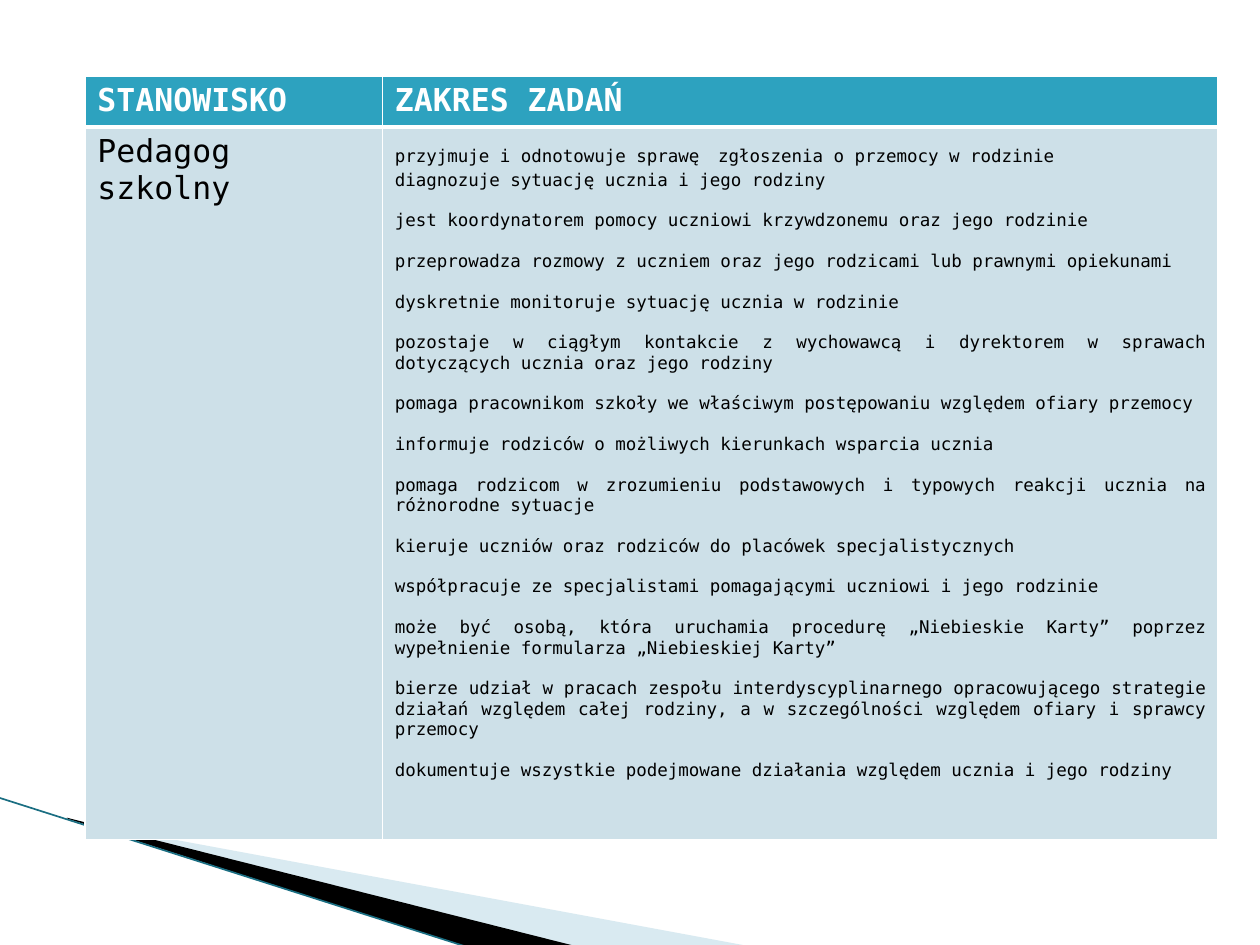
from dataclasses import dataclass

from lxml.etree import SubElement
from pptx import Presentation
from pptx.dml.color import RGBColor
from pptx.enum.shapes import MSO_CONNECTOR
from pptx.enum.text import PP_ALIGN
from pptx.oxml.ns import qn
from pptx.util import Pt

FONT = "DejaVu Sans Mono"
COLORS = {
    "header": "2DA2BF",
    "body": "CDE0E8",
    "white": "FFFFFF",
    "black": "000000",
    "pale": "A0CBDC",
    "line": "1A6E82",
}
HEADERS = ["STANOWISKO", "ZAKRES ZADAŃ"]
POSITION = "Pedagog szkolny"
FIRST_TASK = ["przyjmuje i odnotowuje sprawę", " ", "zgłoszenia o przemocy w rodzinie"]
TASKS = [
    "diagnozuje sytuację ucznia i jego rodziny",
    "jest koordynatorem pomocy uczniowi krzywdzonemu oraz jego rodzinie",
    "przeprowadza rozmowy z uczniem oraz jego rodzicami lub prawnymi opiekunami",
    "dyskretnie monitoruje sytuację ucznia w rodzinie",
    "pozostaje w ciągłym kontakcie z wychowawcą i dyrektorem w sprawach "
    "dotyczących ucznia oraz jego rodziny",
    "pomaga pracownikom szkoły we właściwym postępowaniu względem ofiary przemocy",
    "informuje rodziców o możliwych kierunkach wsparcia ucznia",
    "pomaga rodzicom w zrozumieniu podstawowych i typowych reakcji ucznia na "
    "różnorodne sytuacje",
    "kieruje uczniów oraz rodziców do placówek specjalistycznych",
    "współpracuje ze specjalistami pomagającymi uczniowi i jego rodzinie",
    "może być osobą, która uruchamia procedurę „Niebieskie Karty” poprzez "
    "wypełnienie formularza „Niebieskiej Karty”",
    "bierze udział w pracach zespołu interdyscyplinarnego opracowującego strategie "
    "działań względem całej rodziny, a w szczególności względem ofiary i sprawcy przemocy",
    "dokumentuje wszystkie podejmowane działania względem ucznia i jego rodziny",
]


@dataclass
class Wedge:
    points: list[tuple[float, float]]
    color: str
    opacity: int = 100


WEDGES = [
    Wedge([(39.6, 468.7), (428.4, 540.7), (328.3, 540.7), (39.6, 468)], "pale", 40),
    Wedge([(38.2, 467.3), (329, 540.7), (267.8, 541.4), (38.9, 468)], "black"),
]


def rgb(name: str) -> RGBColor:
    return RGBColor.from_string(COLORS[name])


def draw_wedge(shapes, wedge: Wedge) -> None:
    start, *rest = [(Pt(x), Pt(y)) for x, y in wedge.points]
    builder = shapes.build_freeform(*start)
    builder.add_line_segments(rest)
    sp = builder.convert_to_shape()
    sp.shadow.inherit = False
    sp.line.fill.background()
    sp.fill.solid()
    sp.fill.fore_color.rgb = rgb(wedge.color)
    if wedge.opacity < 100:
        color = sp.fill._xPr.find(".//" + qn("a:srgbClr"))
        SubElement(color, qn("a:alpha"), val=str(wedge.opacity * 1000))


def draw_edge(shapes) -> None:
    line = shapes.add_connector(
        MSO_CONNECTOR.STRAIGHT, Pt(-0.7), Pt(455.8), Pt(267.8), Pt(541.4))
    line.line.color.rgb = rgb("line")
    line.line.width = Pt(0.95)
    SubElement(line._element.spPr, qn("a:effectLst"))


def style_cell(cell, fill: str, top: float, bottom: float) -> None:
    """Set the white borders, which must precede the fill, then the fill."""
    tcPr = cell._tc.get_or_add_tcPr()
    for tag, width in (("lnL", 1), ("lnR", 1), ("lnT", top), ("lnB", bottom)):
        ln = SubElement(tcPr, qn(f"a:{tag}"), w=str(Pt(width)))
        solid = SubElement(ln, qn("a:solidFill"))
        SubElement(solid, qn("a:srgbClr"), val=COLORS["white"])
    cell.fill.solid()
    cell.fill.fore_color.rgb = rgb(fill)


def format_run(r, size: float, color: str, bold: bool = False) -> None:
    r.font.name = FONT
    r.font.size = Pt(size)
    r.font.bold = bold
    r.font.color.rgb = rgb(color)


def write_cell(cell, text: str, color: str, bold: bool) -> None:
    cell.text_frame.text = text
    format_run(cell.text_frame.paragraphs[0].runs[0], 18, color, bold)


def write_tasks(tf) -> None:
    p = tf.paragraphs[0]
    p.alignment = PP_ALIGN.JUSTIFY
    for text in FIRST_TASK:
        r = p.add_run()
        r.text = text
        format_run(r, 18 if text == " " else 10, "black")
    for i, task in enumerate(TASKS):
        p = tf.add_paragraph()
        p.text = task
        p.alignment = PP_ALIGN.JUSTIFY
        p.space_before = Pt(11.6 if i else 0)
        format_run(p.runs[0], 10, "black")


def draw_table(shapes) -> None:
    widths, heights = (170, 477.5), (29.2, 407)
    table = shapes.add_table(2, 2, Pt(48.5), Pt(43.4),
                             Pt(sum(widths)), Pt(sum(heights))).table
    for column, width in zip(table.columns, widths):
        column.width = Pt(width)
    for row, height in zip(table.rows, heights):
        row.height = Pt(height)
    for i, header in enumerate(HEADERS):
        style_cell(table.cell(0, i), "header", 1, 3)
        style_cell(table.cell(1, i), "body", 3, 1)
        write_cell(table.cell(0, i), header, "white", True)
    write_cell(table.cell(1, 0), POSITION, "black", False)
    write_tasks(table.cell(1, 1).text_frame)


def main() -> None:
    prs = Presentation()
    prs.slide_width, prs.slide_height = Pt(720), Pt(540)
    s = prs.slides.add_slide(prs.slide_layouts[6])
    for wedge in WEDGES:
        draw_wedge(s.shapes, wedge)
    draw_edge(s.shapes)
    draw_table(s.shapes)
    prs.save("out.pptx")


if __name__ == "__main__":
    main()
